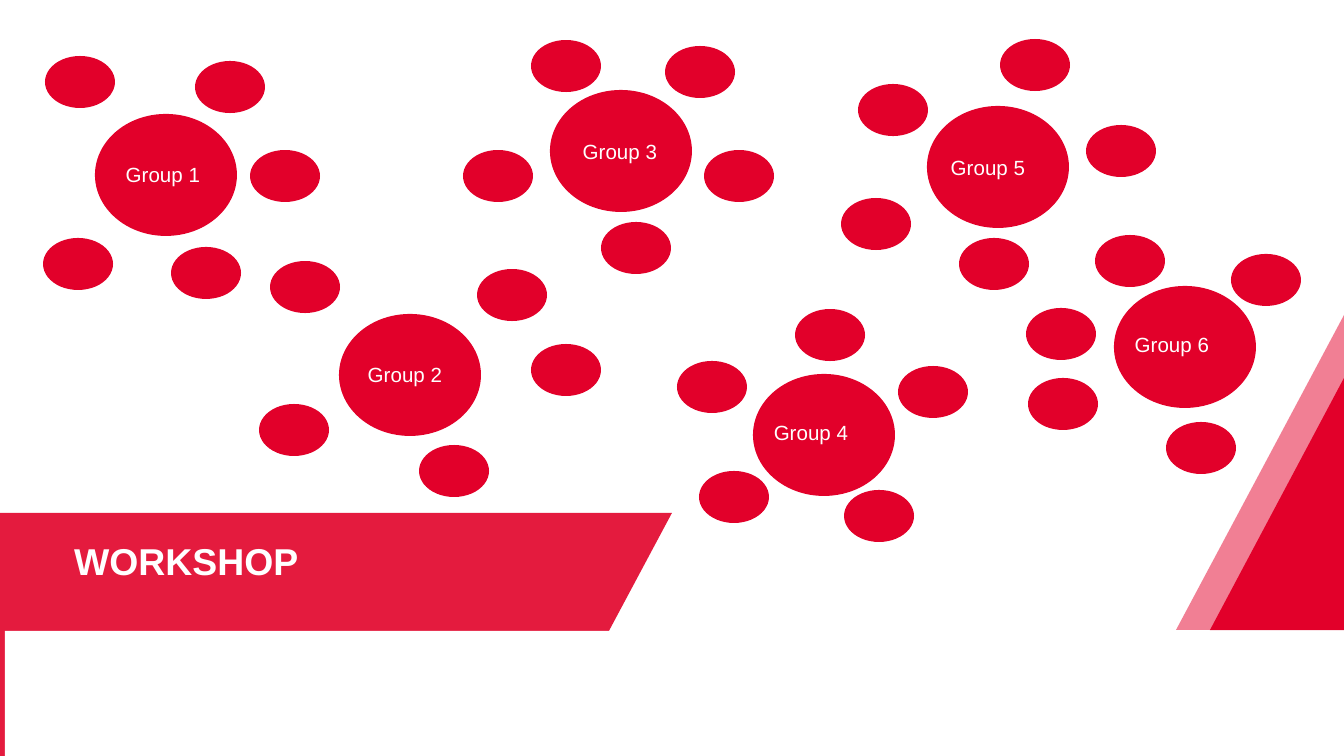
from dataclasses import dataclass

from pptx import Presentation
from pptx.dml.color import RGBColor
from pptx.enum.shapes import MSO_SHAPE as Shape
from pptx.enum.text import MSO_ANCHOR as Anchor, MSO_AUTO_SIZE as AutoSize, PP_ALIGN as Align
from pptx.util import Pt

WIDTH, HEIGHT = 1344, 756
SCALE = 9144000 / WIDTH


@dataclass(frozen=True)
class Theme:
    """Colours, font and type sizes of the slide."""
    red: str = "E2002A"
    band: str = "E41B3E"
    pale: str = "F17F94"
    white: str = "FFFFFF"
    font: str = "Arial"
    title_size: int = 20
    label_size: int = 11


THEME = Theme()
HUB = (142, 122)
MEMBER = (70, 52)
LABEL = (116, 39)

GROUPS = [
    ("Group 1", (95, 114), (10, 41),
     [(100, -53), (155, 36), (76, 133), (-52, 124), (-50, -58)]),
    ("Group 2", (339, 314), (8, 41),
     [(138, -45), (192, 30), (80, 131), (-80, 90), (-69, -53)]),
    ("Group 3", (550, 90), (12, 42),
     [(115, -44), (154, 60), (51, 132), (-87, 60), (-19, -50)]),
    ("Group 4", (753, 374), (0, 39),
     [(42, -65), (145, -8), (91, 116), (-54, 97), (-76, -13)]),
    ("Group 5", (927, 106), (3, 42),
     [(73, -67), (159, 19), (32, 132), (-86, 92), (-69, -22)]),
    ("Group 6", (1114, 286), (0, 39),
     [(-19, -51), (117, -32), (52, 136), (-86, 92), (-88, 22)]),
]


def px(length):
    """Turn px into EMU."""
    return round(length * SCALE)


def paint(shape, color):
    """Give a shape a flat fill without line or shadow."""
    shape.shadow.inherit = False
    shape.fill.solid()
    shape.fill.fore_color.rgb = RGBColor.from_string(color)
    shape.line.fill.background()


def add_preset(slide, kind, box, color):
    """Add a flat preset shape."""
    paint(slide.shapes.add_shape(kind, *map(px, box)), color)


def add_polygon(slide, points, color):
    """Add a flat closed outline."""
    builder = slide.shapes.build_freeform(*points[0], scale=SCALE)
    builder.add_line_segments(points[1:], close=True)
    paint(builder.convert_to_shape(), color)


def style(paragraph, size, bold=False):
    """Format the runs of a paragraph."""
    for run in paragraph.runs:
        run.font.name = THEME.font
        run.font.size = Pt(size)
        run.font.bold = bold
        run.font.color.rgb = RGBColor.from_string(THEME.white)


def add_corner(slide, box):
    """Place the two slanted triangles in the right corner."""
    left, top, width, height = box
    right, bottom = left + width, top + height
    for color, share in ((THEME.pale, 1), (THEME.red, 0.8)):
        peak = (right, round(bottom - height * share))
        foot = (round(right - width * share), bottom)
        add_polygon(slide, [peak, (right, bottom), foot], color)


def add_banner(slide, box):
    """Place the slanted title band, the footer and the edge strip."""
    left, top, width, height = box
    right, bottom, slant = left + width, top + height, 63
    strip = 5
    add_polygon(slide, [(left, top), (right, top), (right - slant, bottom), (left, bottom)], THEME.band)
    add_preset(slide, Shape.RECTANGLE, (left, bottom, strip, HEIGHT - bottom), THEME.band)
    add_preset(slide, Shape.RECTANGLE,
               (left + strip, bottom, WIDTH - strip, HEIGHT - bottom), THEME.white)


def add_title(slide, box, text):
    """Move the title placeholder onto the band and fill it."""
    title = slide.shapes.title
    slide.shapes._spTree.append(title._element)
    title.left, title.top, title.width, title.height = map(px, box)
    frame = title.text_frame
    frame.text = text
    frame.word_wrap = True
    frame.auto_size = AutoSize.NONE
    frame.vertical_anchor = Anchor.TOP
    frame.margin_left = frame.margin_right = frame.margin_top = frame.margin_bottom = 0
    paragraph = frame.paragraphs[0]
    paragraph.alignment = Align.LEFT
    paragraph.line_spacing = 0.9
    style(paragraph, THEME.title_size, bold=True)


def add_group(slide, origin, name, label_offset, member_offsets):
    """Place a hub with its members and its label."""
    def place(offset, size):
        return origin[0] + offset[0], origin[1] + offset[1], *size

    add_preset(slide, Shape.OVAL, place((0, 0), HUB), THEME.red)
    for offset in member_offsets:
        add_preset(slide, Shape.OVAL, place(offset, MEMBER), THEME.red)
    label = slide.shapes.add_textbox(*map(px, place(label_offset, LABEL)))
    frame = label.text_frame
    frame.text = name
    frame.word_wrap = True
    frame.auto_size = AutoSize.SHAPE_TO_FIT_TEXT
    frame.paragraphs[0].alignment = Align.CENTER
    style(frame.paragraphs[0], THEME.label_size)


def main():
    """Build the workshop slide."""
    presentation = Presentation()
    presentation.slide_width, presentation.slide_height = px(WIDTH), px(HEIGHT)
    slide = presentation.slides.add_slide(presentation.slide_layouts[0])
    subtitle = slide.placeholders[1]._element
    subtitle.getparent().remove(subtitle)
    add_corner(slide, (1176, 315, 168, 315))
    add_banner(slide, (0, 513, 672, 118))
    add_title(slide, (74, 543, 520, 137), "WORKSHOP")
    for name, origin, label_offset, member_offsets in GROUPS:
        add_group(slide, origin, name, label_offset, member_offsets)
    presentation.save("out.pptx")


if __name__ == "__main__":
    main()
